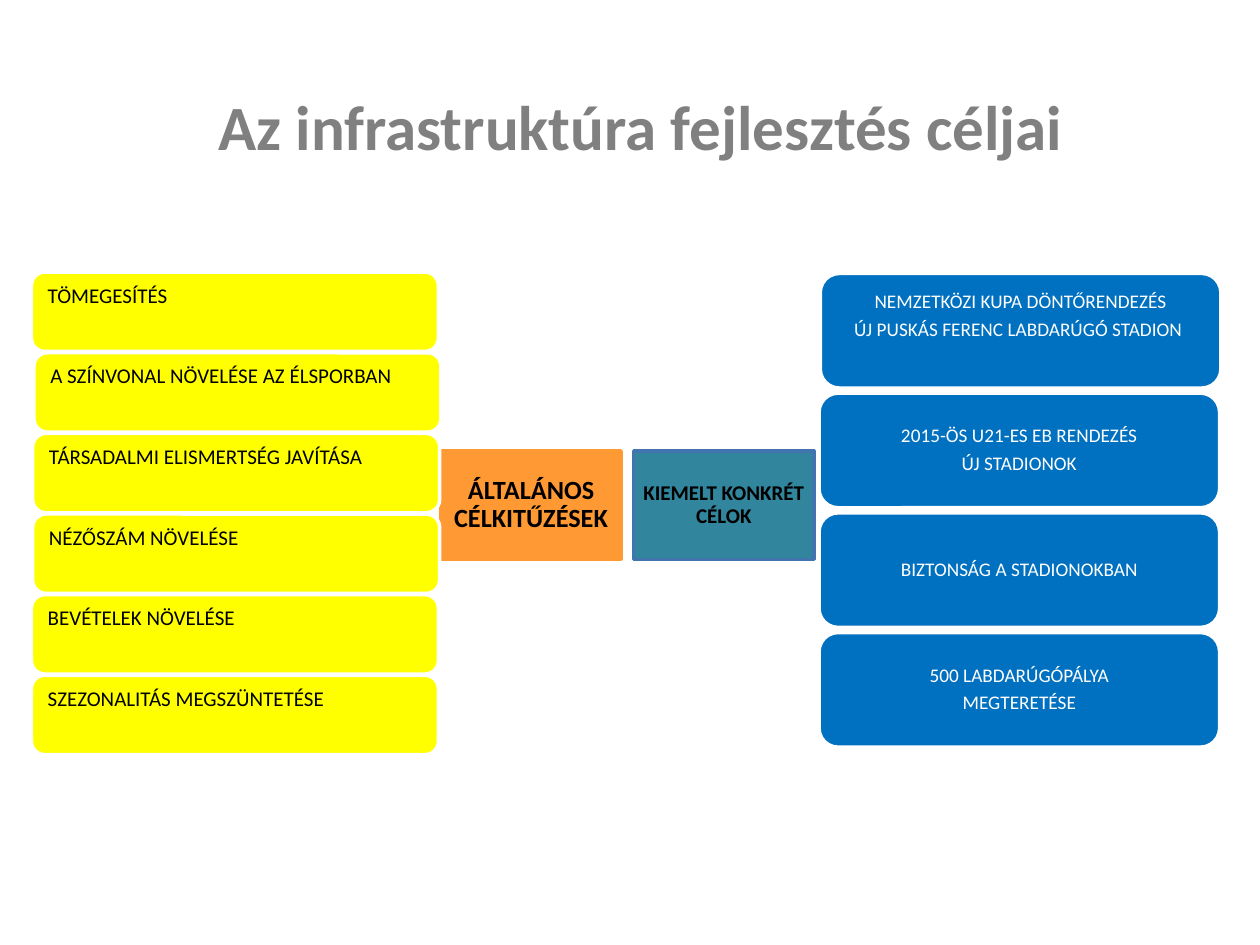
from dataclasses import dataclass

from pptx import Presentation
from pptx.dml.color import RGBColor
from pptx.enum.shapes import MSO_SHAPE
from pptx.enum.text import MSO_ANCHOR, PP_ALIGN
from pptx.slide import Slide
from pptx.text.text import TextFrame
from pptx.util import Inches, Pt

RECT, ROUND = MSO_SHAPE.RECTANGLE, MSO_SHAPE.ROUNDED_RECTANGLE
TOP, MIDDLE = MSO_ANCHOR.TOP, MSO_ANCHOR.MIDDLE
LEFT, CENTER = PP_ALIGN.LEFT, PP_ALIGN.CENTER

BLACK = RGBColor(0x00, 0x00, 0x00)
WHITE = RGBColor(0xFF, 0xFF, 0xFF)
GRAY = RGBColor(0x80, 0x80, 0x80)
ORANGE = RGBColor(0xFF, 0x99, 0x33)
YELLOW = RGBColor(0xFF, 0xFF, 0x00)
BLUE = RGBColor(0x00, 0x70, 0xC0)
TEAL = RGBColor(0x31, 0x85, 0x9C)
EDGE = RGBColor(0x42, 0x74, 0xAF)


@dataclass(frozen=True)
class Style:
    """Look of a box and its text; insets are left/right, top, bottom."""
    kind: MSO_SHAPE
    fill: RGBColor
    line: RGBColor
    ink: RGBColor
    size: int
    bold: bool = False
    align: PP_ALIGN = CENTER
    anchor: MSO_ANCHOR = MIDDLE
    pads: tuple[float, float, float] = (0.05, 0.05, 0.05)
    tight: bool = True


@dataclass(frozen=True)
class Stack:
    """Column of equal boxes spaced by a fixed step."""
    left: float
    top: float
    width: float
    height: float
    step: float


@dataclass(frozen=True)
class Item:
    lines: tuple[str, ...]
    shift: float = 0      # sideways offset of the box
    lift: float = 0       # extra inset below the text


AIM = Style(ROUND, YELLOW, WHITE, BLACK, 12, align=LEFT, anchor=TOP,
            pads=(0.1, 0.05, 0.05), tight=False)
GOAL = Style(ROUND, BLUE, WHITE, WHITE, 11)
BROAD = Style(RECT, ORANGE, ORANGE, BLACK, 15, bold=True, pads=(0.06, 0.06, 0.06))
KEY = Style(RECT, TEAL, EDGE, BLACK, 12, bold=True)

AIM_COL = Stack(0.25, 2.16, 3.23, 0.63, 0.64)
GOAL_COL = Stack(6.5, 2.17, 3.18, 0.91, 0.95)
BROAD_COL = Stack(3.5, 3.58, 1.43, 0.86, 0)
KEY_COL = Stack(5.03, 3.58, 1.43, 0.86, 0)

AIMS = [
    Item(("TÖMEGESÍTÉS",)),
    Item(("A SZÍNVONAL NÖVELÉSE AZ ÉLSPORBAN",), shift=0.02),
    Item(("TÁRSADALMI ELISMERTSÉG JAVÍTÁSA",), shift=0.01),
    Item(("NÉZŐSZÁM NÖVELÉSE",), shift=0.01),
    Item(("BEVÉTELEK NÖVELÉSE",)),
    Item(("SZEZONALITÁS MEGSZÜNTETÉSE",)),
]
GOALS = [
    Item(("NEMZETKÖZI KUPA DÖNTŐRENDEZÉS",
          "ÚJ PUSKÁS FERENC LABDARÚGÓ STADION "), shift=0.01, lift=0.23),
    Item(("2015-ÖS U21-ES EB RENDEZÉS", "ÚJ STADIONOK")),
    Item(("BIZTONSÁG A STADIONOKBAN",)),
    Item(("500 LABDARÚGÓPÁLYA", "MEGTERETÉSE")),
]


def write(frame: TextFrame, lines: tuple[str, ...], size: int, ink: RGBColor,
          bold: bool, align: PP_ALIGN, tight: bool = False) -> None:
    frame.word_wrap = True
    frame.text = "\n".join(lines)
    for para in frame.paragraphs:
        para.alignment = align
        font = para.font
        font.name, font.size, font.bold = "Calibri", Pt(size), bold
        font.color.rgb = ink
        if tight:
            para.line_spacing = 0.9
            para.space_after = Pt(round(0.35 * size, 1))


def draw(slide: Slide, col: Stack, style: Style, items: list[Item]) -> None:
    for row, item in enumerate(items):
        box = slide.shapes.add_shape(
            style.kind, Inches(col.left + item.shift),
            Inches(col.top + row * col.step),
            Inches(col.width), Inches(col.height))
        box.shadow.inherit = False
        box.fill.solid()
        box.fill.fore_color.rgb = style.fill
        box.line.color.rgb = style.line
        box.line.width = Pt(2)
        frame = box.text_frame
        side, above, below = style.pads
        frame.margin_left = frame.margin_right = Inches(side)
        frame.margin_top = Inches(above)
        frame.margin_bottom = Inches(below + item.lift)
        frame.vertical_anchor = style.anchor
        write(frame, item.lines, style.size, style.ink, style.bold,
              style.align, style.tight)


def main() -> None:
    deck = Presentation()
    deck.slide_width, deck.slide_height = Inches(10), Inches(7.5)
    slide = deck.slides.add_slide(deck.slide_layouts[6])

    # Title
    title = slide.shapes.add_textbox(
        Inches(0.67), Inches(0.44), Inches(8.83), Inches(1.11)).text_frame
    title.vertical_anchor = MIDDLE
    write(title, ("Az infrastruktúra fejlesztés céljai",), 36, GRAY, True, CENTER)

    # General aims on the left, key goals on the right
    draw(slide, BROAD_COL, BROAD, [Item(("ÁLTALÁNOS CÉLKITŰZÉSEK",))])
    draw(slide, GOAL_COL, GOAL, GOALS)
    draw(slide, AIM_COL, AIM, AIMS)
    draw(slide, KEY_COL, KEY, [Item(("KIEMELT KONKRÉT CÉLOK",))])

    deck.save("out.pptx")


if __name__ == "__main__":
    main()
